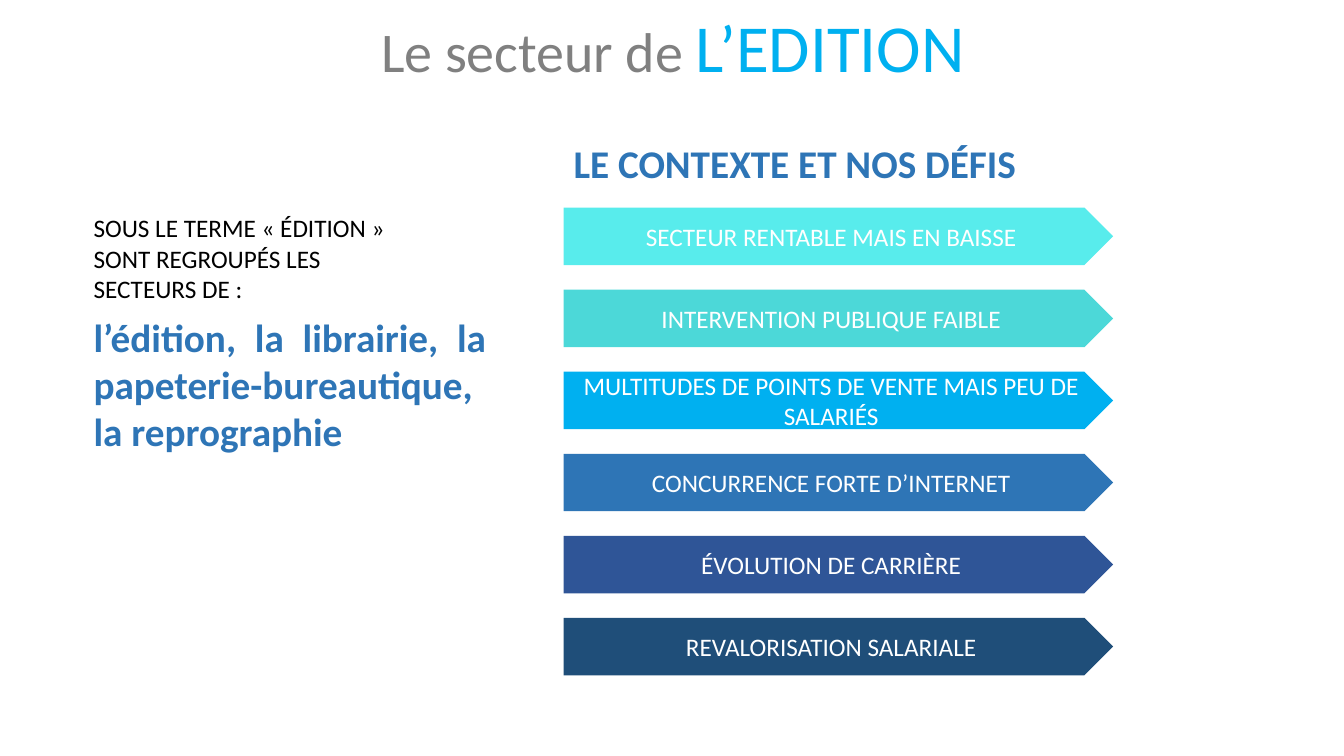
from dataclasses import dataclass

from pptx import Presentation
from pptx.dml.color import RGBColor as Rgb
from pptx.enum.shapes import MSO_SHAPE as Kind
from pptx.enum.text import MSO_ANCHOR as Anchor, MSO_AUTO_SIZE as Fit, PP_ALIGN as Align
from pptx.util import Inches, Pt

COLORS = {
    "white": "FFFFFF",
    "black": "000000",
    "gray": "808080",
    "aqua": "58ECEC",
    "teal": "4CD8D8",
    "sky": "00B0F0",
    "blue": "2E75B6",
    "navy": "2F5597",
    "deep": "1F4E79",
}
FONT = "Calibri"
LEFT, TOP, WIDTH, HEIGHT = 5.59, 2.06, 5.45, 0.57
STEP = 0.814


@dataclass
class Note:
    left: float
    top: float
    width: float
    height: float
    text: str
    size: int
    color: str
    bold: bool = False
    align: Align = Align.LEFT


@dataclass
class Arrow:
    text: str
    color: str


NOTES = [
    Note(0.83, 2.06, 3.32, 1.01,
         "SOUS LE TERME « ÉDITION » SONT REGROUPÉS LES SECTEURS DE :", 18, "black"),
    Note(0.83, 3.06, 4.09, 1.51,
         "l’édition, la librairie, la papeterie-bureautique, la reprographie",
         28, "blue", True, Align.JUSTIFY),
    Note(LEFT, 1.33, 5.19, 0.57, "LE CONTEXTE ET NOS DÉFIS", 28, "blue", True),
]
ARROWS = [
    Arrow("SECTEUR RENTABLE MAIS EN BAISSE", "aqua"),
    Arrow("INTERVENTION PUBLIQUE FAIBLE", "teal"),
    Arrow("MULTITUDES DE POINTS DE VENTE MAIS PEU DE SALARIÉS", "sky"),
    Arrow("CONCURRENCE FORTE D’INTERNET", "blue"),
    Arrow("ÉVOLUTION DE CARRIÈRE", "navy"),
    Arrow("REVALORISATION SALARIALE", "deep"),
]


def style(font, size: int, color: str, bold: bool = False) -> None:
    font.name = FONT
    font.size = Pt(size)
    font.bold = bold
    font.color.rgb = Rgb.from_string(COLORS[color])


def draw_title(slide) -> None:
    title = slide.shapes.title
    title.left, title.top = Inches(2.48), Inches(0)
    title.width, title.height = Inches(8.39), Inches(0.91)
    frame = title.text_frame
    frame.auto_size = Fit.NONE
    frame.vertical_anchor = Anchor.TOP
    para = frame.paragraphs[0]
    para.alignment = Align.CENTER
    for text, size, color in (("Le secteur de ", 40, "gray"), ("L’EDITION", 48, "sky")):
        run = para.add_run()
        run.text = text
        style(run.font, size, color)


def draw_note(slide, note: Note) -> None:
    box = slide.shapes.add_textbox(
        Inches(note.left), Inches(note.top), Inches(note.width), Inches(note.height))
    frame = box.text_frame
    frame.word_wrap = True
    para = frame.paragraphs[0]
    para.text = note.text
    para.alignment = note.align
    style(para.font, note.size, note.color, note.bold)


def draw_arrow(slide, arrow: Arrow, top: float) -> None:
    shape = slide.shapes.add_shape(
        Kind.PENTAGON, Inches(LEFT), Inches(top), Inches(WIDTH), Inches(HEIGHT))
    shape.shadow.inherit = False
    shape.fill.solid()
    shape.fill.fore_color.rgb = Rgb.from_string(COLORS[arrow.color])
    shape.line.fill.background()
    frame = shape.text_frame
    frame.word_wrap = True
    frame.vertical_anchor = Anchor.MIDDLE
    para = frame.paragraphs[0]
    para.text = arrow.text
    para.alignment = Align.CENTER
    style(para.font, 18, "white")


def main() -> None:
    deck = Presentation()
    deck.slide_width, deck.slide_height = Inches(13.33), Inches(7.5)
    slide = deck.slides.add_slide(deck.slide_layouts[5])
    draw_title(slide)
    for note in NOTES:
        draw_note(slide, note)
    for row, arrow in enumerate(ARROWS):
        draw_arrow(slide, arrow, TOP + row * STEP)
    deck.save("out.pptx")


if __name__ == "__main__":
    main()
